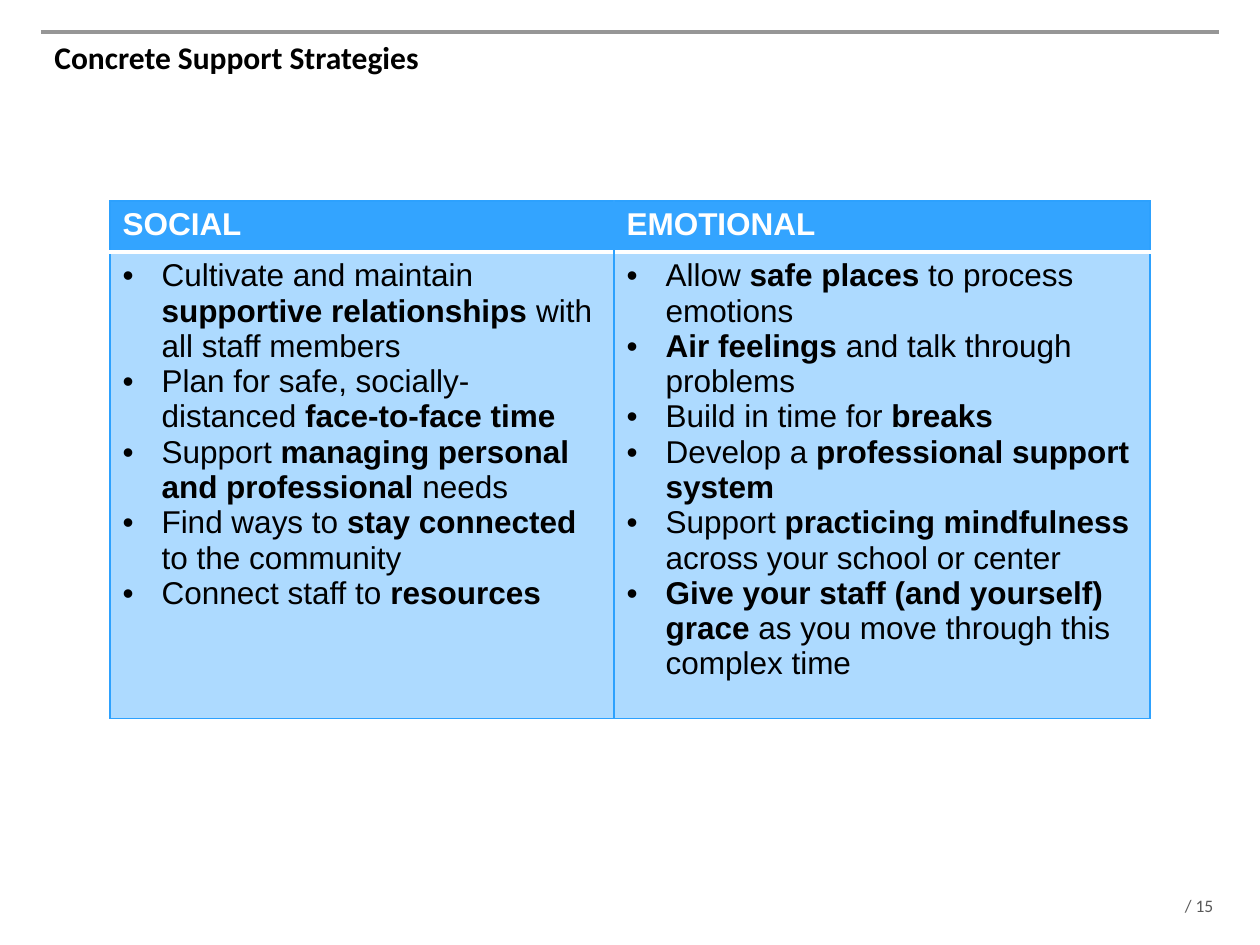
from lxml.etree import SubElement
from pptx import Presentation
from pptx.dml.color import RGBColor
from pptx.enum.shapes import MSO_CONNECTOR
from pptx.oxml.ns import qn
from pptx.util import Emu, Pt

PX = 914400 / 126
BLACK = RGBColor(0x00, 0x00, 0x00)
WHITE = RGBColor(0xFF, 0xFF, 0xFF)
GRAY = RGBColor(0x96, 0x96, 0x96)
DARK_GRAY = RGBColor(0x59, 0x59, 0x59)
BLUE = RGBColor(0x33, 0xA4, 0xFF)
BORDER_BLUE = RGBColor(0x2D, 0xA1, 0xFE)

# Asterisks enclose the bold words
STRATEGIES = {
    "SOCIAL": [
        "Cultivate and maintain *supportive relationships* with all staff members",
        "Plan for safe, socially-distanced *face-to-face time*",
        "Support *managing personal and professional *needs",
        "Find ways to *stay connected *to the community",
        "Connect staff to *resources*",
    ],
    "EMOTIONAL": [
        "Allow *safe places *to process emotions",
        "*Air feelings *and talk through problems",
        "Build in time for *breaks*",
        "Develop a *professional support system*",
        "Support *practicing mindfulness *across your school or center",
        "*Give your staff (and yourself) grace *as you move through this complex time",
    ],
}


def px(length):
    return Emu(round(length * PX))


def write(frame, lines, font="Arial", size=18, color=BLACK, bold=False, bullet=False):
    """Write one paragraph per line; *marked* words switch the weight."""
    frame.word_wrap = True
    for number, line in enumerate(lines):
        paragraph = frame.paragraphs[0] if number == 0 else frame.add_paragraph()
        if bullet:
            properties = paragraph._p.get_or_add_pPr()
            properties.set("marL", str(px(39)))
            properties.set("indent", str(-px(39)))
            SubElement(properties, qn("a:buFont"), typeface="Arial")
            SubElement(properties, qn("a:buChar"), char="•")
        for part, words in enumerate(line.split("*")):
            if words:
                run = paragraph.add_run()
                run.text = words
                run.font.name = font
                run.font.size = Pt(size)
                run.font.color.rgb = color
                run.font.bold = bold != (part % 2 == 1)


def add_text(slide, box, text, margins=None, **style):
    frame = slide.shapes.add_textbox(*map(px, box)).text_frame
    if margins is not None:
        frame.margin_left = frame.margin_right = px(margins)
        frame.margin_top = frame.margin_bottom = px(margins)
    write(frame, [text], **style)


def style_cell(cell, borders, opacity=100):
    properties = cell._tc.get_or_add_tcPr()
    for side in ("lnL", "lnR", "lnT", "lnB"):
        color, width = borders.get(side, (BORDER_BLUE, 0.75))
        line = SubElement(properties, qn(f"a:{side}"), w=str(Pt(width)))
        SubElement(SubElement(line, qn("a:solidFill")), qn("a:srgbClr"), val=str(color))
    cell.fill.solid()
    cell.fill.fore_color.rgb = BLUE
    if opacity < 100:
        fill_color = properties.find(qn("a:solidFill")).find(qn("a:srgbClr"))
        SubElement(fill_color, qn("a:alpha"), val=str(opacity * 1000))


def add_header(slide, left, top, width):
    # Rule across the top, with the title below it
    rule = slide.shapes.add_connector(
        MSO_CONNECTOR.STRAIGHT, px(left), px(top), px(left + width), px(top))
    rule.line.color.rgb = GRAY
    rule.line.width = Pt(2)
    SubElement(rule._element.spPr, qn("a:effectLst"))
    add_text(slide, (left + 1, top, width - 2, 116), "Concrete Support Strategies",
             font="Calibri", bold=True)


def add_strategies(slide, left, top, width, height):
    header_height = 51
    table = slide.shapes.add_table(
        2, len(STRATEGIES), px(left), px(top), px(width), px(height)).table
    table.horz_banding = False
    table.rows[0].height = px(header_height)
    table.rows[1].height = px(height - header_height)
    table.columns[0].width = px(504)
    table.columns[1].width = px(width - 504)
    divider = (WHITE, 2)
    for column, (heading, strategies) in enumerate(STRATEGIES.items()):
        header, body = table.cell(0, column), table.cell(1, column)
        inner_side = "lnR" if column == 0 else "lnL"
        style_cell(header, {"lnB": divider, inner_side: (BLUE, 0.75)})
        write(header.text_frame, [heading], color=WHITE, bold=True)
        style_cell(body, {"lnT": divider}, opacity=40)
        write(body.text_frame, strategies, bullet=True)


def main():
    deck = Presentation()
    deck.slide_width, deck.slide_height = px(1260), px(945)
    slide = deck.slides.add_slide(deck.slide_layouts[6])
    add_text(slide, (1181, 895, 83, 21), " / 15", margins=0,
             font="Calibri", size=10, color=DARK_GRAY)
    add_header(slide, 41, 32, 1178)
    add_strategies(slide, 110, 201, 1040, 487)
    deck.save("out.pptx")


if __name__ == "__main__":
    main()
